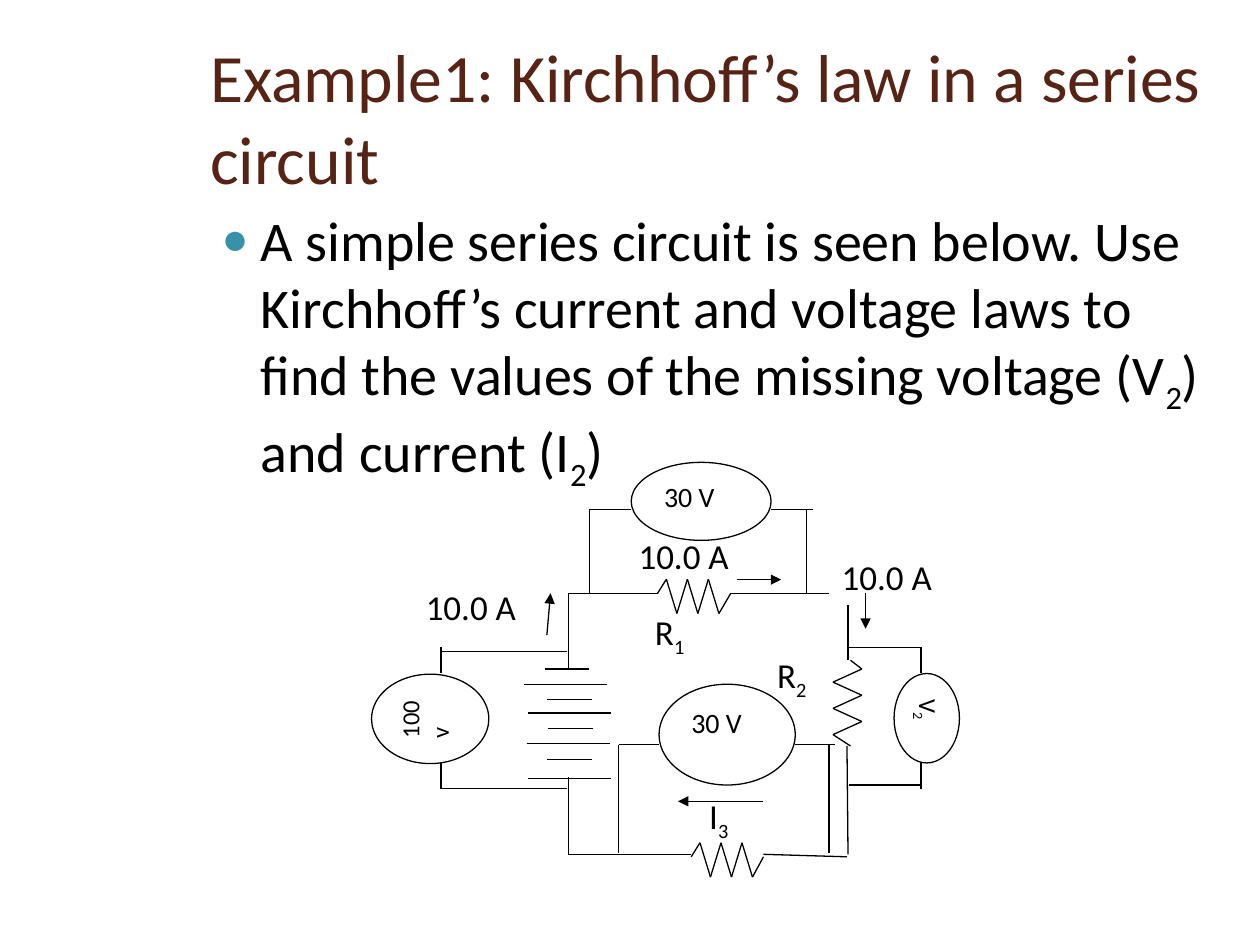
from itertools import pairwise

from lxml.etree import SubElement
from pptx import Presentation
from pptx.dml.color import RGBColor
from pptx.enum.shapes import MSO_CONNECTOR, MSO_SHAPE
from pptx.enum.text import MSO_ANCHOR, MSO_AUTO_SIZE, PP_ALIGN
from pptx.oxml.ns import qn
from pptx.util import Pt

BLACK = RGBColor(0x00, 0x00, 0x00)
WHITE = RGBColor(0xFF, 0xFF, 0xFF)
BROWN = RGBColor(0x57, 0x23, 0x14)
TEAL = RGBColor(0x38, 0x91, 0xA7)
FONT = "Calibri"
LINE_WIDTH = 0.75

# Text is given as parts that alternate between normal and subscript.
BODY = (
    "A simple series circuit is seen below. Use Kirchhoff’s current and "
    "voltage laws to find the values of the missing voltage (V",
    "2", ") and current (I", "2", ")",
)
# left, top, width, text parts
INNER_LABELS = [
    (437, 370, 57.6, ("R", "2")),
    (367.2, 345.6, 57.6, ("R", "1")),
    (398.2, 450.7, 57.6, ("I", "3")),
    (357.8, 301.7, 87.1, ("10.0 A",)),
]
OUTER_LABELS = [
    (236.2, 331.2, 87.1, ("10.0 A",)),
    (473.8, 313.9, 87.1, ("10.0 A",)),
]
# left, top, width, height, rotation, text size, space after, text parts
METERS = [
    (360.7, 264.2, 79.9, 44.6, 0, 16, 10, ("30 V",)),
    (504, 391.7, 51.1, 37.4, 90, 14, 10, ("V", "2")),
    (376.6, 391, 77.8, 57.6, 0, 16, 0, ("30 V",)),
    (220.3, 377.3, 51.1, 67, 270, 14, 0, ("100v",)),
]
MAIN_LOOP = [
    [(324.7, 382.3), (324.7, 339), (375.8, 339)],
    [(417.6, 339), (484, 339)],
    [(484.6, 339), (484.6, 377.3)],
    [(484, 426.2), (484.6, 488.2)],
    [(484, 489.6), (436.3, 488.2)],
    [(394.6, 488.2), (324.7, 488.2), (324.7, 444.2)],
]
METER_LEADS = [
    [(337, 339), (337, 291), (360.7, 291)],
    [(460.8, 339), (460.8, 291)],
    [(440.6, 291), (464.4, 291)],
    [(485.3, 370), (526.3, 370), (526.3, 384.5)],
    [(485.3, 448.6), (526.3, 448.6)],
    [(526.3, 435.6), (526.3, 450.7)],
    [(353.5, 487.4), (353.5, 425.5), (376.6, 425.5)],
    [(473.8, 487.4), (473.8, 425.5)],
    [(454.3, 425.5), (477.4, 425.5)],
    [(324, 450.7), (252, 450.7), (252, 435.6)],
    [(324, 372.2), (252, 372.2)],
    [(252, 384.5), (252, 370)],
]
# left, y
SHORT_PLATES = [(311.2, 382.3), (312.5, 399.6), (313.2, 416.2), (312.5, 434.2)]
LONG_PLATES = [(299.5, 391), (301.7, 407.5), (301, 424.8), (301.7, 445)]
CURRENT_ARROWS = [
    ((312.5, 362.9), (314.6, 339)),
    ((421.2, 331.2), (446.4, 331.2)),
    ((494.6, 339), (494.6, 359.3)),
    ((436.3, 457.9), (387.4, 457.9)),
]


def write_parts(paragraph, parts, size, color=BLACK):
    """Write parts that alternate between normal and subscript text."""
    for index, part in enumerate(parts):
        run = paragraph.add_run()
        run.text = part
        if index % 2:
            run._r.get_or_add_rPr().set("baseline", "-25000")
    paragraph.font.name = FONT
    paragraph.font.size = Pt(size)
    paragraph.font.color.rgb = color
    paragraph.alignment = PP_ALIGN.LEFT


def place(shape, left, top, width, height):
    shape.left, shape.top = Pt(left), Pt(top)
    shape.width, shape.height = Pt(width), Pt(height)


def fill_title(title):
    place(title, 113, 21.6, 590.4, 90)
    frame = title.text_frame
    frame.auto_size = MSO_AUTO_SIZE.NONE
    frame.vertical_anchor = MSO_ANCHOR.MIDDLE
    write_parts(frame.paragraphs[0],
                ("Example1: Kirchhoff’s law in a series circuit",), 38.7, BROWN)


def fill_body(body):
    place(body, 113, 113.8, 590.4, 378)
    frame = body.text_frame
    frame.auto_size = MSO_AUTO_SIZE.NONE
    question = frame.paragraphs[0]
    question.space_before = Pt(6)
    properties = question._p.get_or_add_pPr()
    properties.set("marL", str(Pt(28.8)))
    properties.set("indent", str(Pt(-22.3)))
    bullet_color = SubElement(properties, qn("a:buClr"))
    SubElement(bullet_color, qn("a:srgbClr"), val=str(TEAL))
    SubElement(properties, qn("a:buSzPct"), val="80000")
    SubElement(properties, qn("a:buChar"), char="●")
    write_parts(question, BODY, 32)


def add_text_shape(slide, preset, box, parts, size, outline, space_after):
    shape = slide.shapes.add_shape(preset, *map(Pt, box))
    shape.shadow.inherit = False
    shape.fill.solid()
    shape.fill.fore_color.rgb = WHITE
    shape.line.color.rgb = outline
    shape.line.width = Pt(LINE_WIDTH)
    frame = shape.text_frame
    frame.word_wrap = True
    frame.vertical_anchor = MSO_ANCHOR.TOP
    paragraph = frame.paragraphs[0]
    paragraph.space_after = Pt(space_after)
    write_parts(paragraph, parts, size)
    return shape


def add_labels(slide, labels):
    for left, top, width, parts in labels:
        add_text_shape(slide, MSO_SHAPE.RECTANGLE, (left, top, width, 31.7),
                       parts, 20, WHITE, 10)


def add_meters(slide):
    for *box, rotation, size, space_after, parts in METERS:
        meter = add_text_shape(slide, MSO_SHAPE.OVAL, box, parts, size,
                               BLACK, space_after)
        meter.rotation = rotation


def add_line(slide, start, end):
    line = slide.shapes.add_connector(
        MSO_CONNECTOR.STRAIGHT, *map(Pt, (*start, *end)))
    line.line.color.rgb = BLACK
    line.line.width = Pt(LINE_WIDTH)
    SubElement(line._element.spPr, qn("a:effectLst"))
    return line


def add_wire(slide, points):
    for start, end in pairwise(points):
        add_line(slide, start, end)


def add_resistor(slide, x, y, pitch, length, peaks, vertical=False):
    """Draw a zigzag from (x, y) whose six tips alternate between two peaks."""
    tips = [(5 + pitch * i, peaks[i % 2]) for i in range(6)]
    offsets = [(0, 0), *tips, (length, 0)]
    if vertical:
        offsets = [(across, along) for along, across in offsets]
    add_wire(slide, [(x + dx, y + dy) for dx, dy in offsets])


def add_battery(slide):
    for plates, width in ((SHORT_PLATES, 25.6), (LONG_PLATES, 47.5)):
        for left, y in plates:
            add_line(slide, (left, y), (left + width, y))


def add_arrow(slide, start, end):
    arrow = add_line(slide, start, end)
    SubElement(arrow.line._get_or_add_ln(), qn("a:tailEnd"), type="triangle")


def main():
    deck = Presentation()
    deck.slide_width, deck.slide_height = Pt(720), Pt(540)
    slide = deck.slides.add_slide(deck.slide_layouts[1])
    fill_title(slide.shapes.title)
    fill_body(slide.placeholders[1])

    add_labels(slide, INNER_LABELS)
    for points in MAIN_LOOP + METER_LEADS:
        add_wire(slide, points)
    add_resistor(slide, 375.8, 339, 6, 41.8, (-8, 11.6))
    add_resistor(slide, 395, 489.6, 6, 41.3, (-8, 11.6))
    add_resistor(slide, 486, 377.3, 7.5, 49, (6.5, -10), vertical=True)
    add_battery(slide)
    add_meters(slide)
    add_labels(slide, OUTER_LABELS)
    for start, end in CURRENT_ARROWS:
        add_arrow(slide, start, end)

    deck.save("out.pptx")


if __name__ == "__main__":
    main()
